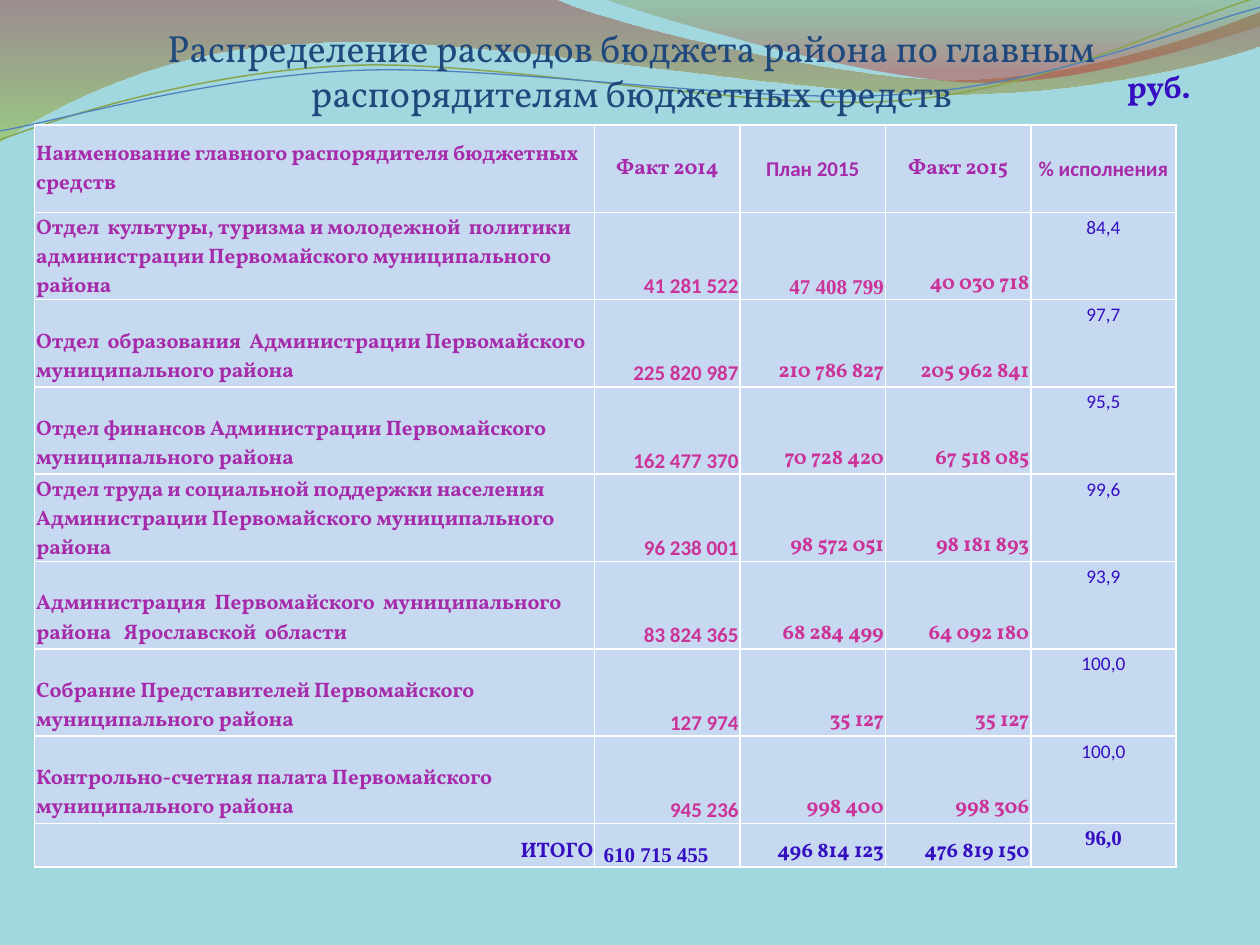
"""Build the slide of district budget spending by main fund holder."""
from dataclasses import dataclass
from math import cos, radians, sin

from lxml.etree import SubElement as Sub
from pptx import Presentation
from pptx.dml.color import RGBColor as Rgb
from pptx.enum.text import MSO_ANCHOR as Anchor, PP_ALIGN as Align
from pptx.oxml import parse_xml
from pptx.oxml.ns import nsdecls, qn
from pptx.util import Cm, Pt


@dataclass(frozen=True)
class Theme:
    back: str = "A1D8DF"
    cell: str = "C6D9F1"
    rule: str = "FFFFFF"
    title: str = "1F497D"
    label: str = "A62AA9"
    money: str = "CC3399"
    total: str = "350EC2"
    olive: str = "89A54F"
    blue: str = "4F81BD"
    serif: str = "Vollkorn"
    sans: str = "Calibri"
    times: str = "Times New Roman"
    head: float = 21.6
    unit: float = 18
    body: float = 12
    small: float = 11


THEME = Theme()
TILT = -2.7

BAND = [
    [(0, 0)], [(11.18, -0.03)],
    [(12.09, 0.43), (16.87, 1.6), (19.25, 1.6)],
    [(21.67, 1.6), (24.33, 0.66), (25.4, 0.23)],
    [(25.43, 0.91)],
    [(24.97, 1.12), (22.1, 1.93), (18.95, 1.9)],
    [(15.8, 1.9), (9.7, 0.71), (6.53, 0.86)],
    [(3.28, 0.91), (1.17, 2.11), (-0.03, 2.87)],
]
CREST = [
    [(12.17, -0.03)],
    [(12.93, 0.28), (17.32, 1.57), (19.53, 1.65)],
    [(21.74, 1.75), (24.41, 0.81), (25.4, 0.53)],
    [(25.4, 0)],
]
UPPER = [
    [(0, 2.82)],
    [(1.22, 2.36), (4.01, 1.45), (7.04, 1.32)],
    [(10.03, 1.19), (15.06, 2.26), (18.11, 2.03)],
    [(21.16, 1.8), (23.83, 0.38), (25.35, -0.05)],
]
LOWER = [
    [(0, 2.64)],
    [(1.19, 2.44), (4.17, 1.55), (7.19, 1.42)],
    [(10.24, 1.3), (15.16, 2.13), (18.21, 1.9)],
    [(21.23, 1.7), (23.9, 0.53), (25.4, 0.15)],
]
ROWS = [
    ("Наименование главного распорядителя бюджетных средств",
     "Факт 2014", "План 2015", "Факт 2015", "% исполнения"),
    ("Отдел  культуры, туризма и молодежной  политики администрации Первомайского муниципального района",
     "41 281 522", "47 408 799", "40 030 718", "84,4"),
    ("Отдел  образования  Администрации Первомайского муниципального района",
     "225 820 987", "210 786 827", "205 962 841", "97,7"),
    ("Отдел финансов Администрации Первомайского муниципального района",
     "162 477 370", "70 728 420", "67 518 085", "95,5"),
    ("Отдел труда и социальной поддержки населения Администрации Первомайского муниципального района",
     "96 238 001", "98 572 051", "98 181 893", "99,6"),
    ("Администрация  Первомайского  муниципального района   Ярославской  области",
     "83 824 365", "68 284 499", "64 092 180", "93,9"),
    ("Собрание Представителей Первомайского муниципального района",
     "127 974", "35 127", "35 127", "100,0"),
    ("Контрольно-счетная палата Первомайского муниципального района",
     "945 236", "998 400", "998 306", "100,0"),
    ("ИТОГО", "610 715 455", "496 814 123", "476 819 150", "96,0"),
]
LAST = len(ROWS) - 1


def add_path(slide, parts, close):
    spots = [(Cm(x), Cm(y)) for part in parts for x, y in part]
    pen = slide.shapes.build_freeform(*spots[0])
    pen.add_line_segments(spots[1:], close=close)
    shape = pen.convert_to_shape()
    shape.shadow.inherit = False
    steps = iter(list(shape.element.spPr.iter(qn("a:lnTo"))))
    for part in parts[1:]:
        nodes = [next(steps) for spot in part]
        if len(nodes) == 3:
            curve = parse_xml(f'<a:cubicBezTo {nsdecls("a")}/>')
            nodes[0].addprevious(curve)
            for node in nodes:
                curve.append(node[0])
                node.getparent().remove(node)
    return shape


def add_wave(slide, parts, stops):
    shape = add_path(slide, parts, True)
    shape.line.fill.background()
    shape.fill.gradient()
    shape.fill.gradient_angle = 270
    nodes = shape.fill.gradient_stops
    for stop, (place, color, alpha) in zip(nodes, stops):
        stop.position = place
        stop.color.rgb = Rgb.from_string(color)
    tints = shape.element.spPr.iter(qn("a:srgbClr"))
    for tint, (place, color, alpha) in zip(tints, stops):
        Sub(tint, qn("a:alpha"), val=str(alpha * 1000))


def turn(spot, hub, angle):
    x, y = spot[0] - hub[0], spot[1] - hub[1]
    c, s = cos(radians(angle)), sin(radians(angle))
    return hub[0] + x * c - y * s, hub[1] + x * s + y * c


def add_curve(slide, parts, hub, color, width):
    flat = [[turn(spot, hub, -TILT) for spot in part] for part in parts]
    shape = add_path(slide, flat, False)
    shape.rotation = TILT
    shape.fill.background()
    shape.line.color.rgb = Rgb.from_string(color)
    shape.line.width = Pt(width)


def write(frame, text, font, size, color, bold, align, space=None):
    frame.text = text
    para = frame.paragraphs[0]
    para.alignment = align
    para.line_spacing = space
    face = para.runs[0].font
    face.name, face.size, face.bold = font, Pt(size), bold
    face.color.rgb = Rgb.from_string(color)


def add_text(slide, box, anchor, text, *style):
    frame = slide.shapes.add_textbox(*map(Cm, box)).text_frame
    frame.word_wrap = True
    frame.vertical_anchor = anchor
    write(frame, text, *style)
    return frame


def choose(row, col):
    t = THEME
    if row == 0:
        font = t.sans if col in (2, 4) else t.serif
        return font, t.body, t.label, True, Align.CENTER if col else Align.LEFT
    if row == LAST:
        font = t.times if col in (1, 4) else t.serif
        align = {1: Align.LEFT, 4: Align.CENTER}.get(col, Align.RIGHT)
        return font, t.body, t.total, True, align
    if col == 0:
        return t.serif, t.body, t.label, True, Align.LEFT
    if col == 4:
        return t.sans, t.small, t.total, False, Align.CENTER
    font = t.sans if col == 1 else t.times if (row, col) == (1, 2) else t.serif
    return font, t.body, t.money, True, Align.RIGHT


def add_rules(cell):
    props = cell._tc.get_or_add_tcPr()
    for spot, side in enumerate("LRTB"):
        props.insert(spot, parse_xml(
            f'<a:ln{side} {nsdecls("a")} w="{Pt(1)}"><a:solidFill>'
            f'<a:srgbClr val="{THEME.rule}"/></a:solidFill></a:ln{side}>'))


def fill_cell(cell, row, col, text):
    loose = row > 0 and col == 4 or (row, col) == (LAST, 1)
    cell.margin_left = cell.margin_right = Cm(0.18 if loose else 0.03)
    cell.margin_top = Cm(0 if loose else 0.04)
    cell.margin_bottom = Cm(0 if loose else 0.01)
    cell.vertical_anchor = (Anchor.MIDDLE if row == 0 else
                            Anchor.TOP if col == 4 else Anchor.BOTTOM)
    cell.fill.solid()
    cell.fill.fore_color.rgb = Rgb.from_string(THEME.cell)
    add_rules(cell)
    write(cell.text_frame, text, *choose(row, col), 1.15 if loose else None)


def add_grid(slide):
    box = map(Cm, (0.7, 2.52, 23.01, 15.01))
    grid = slide.shapes.add_table(len(ROWS), len(ROWS[0]), *box).table
    grid.first_row = grid.horz_banding = False
    for col, part in enumerate(grid.columns):
        part.width = Cm(2.93 if col else 11.29)
    for row, texts in enumerate(ROWS):
        grid.rows[row].height = Cm(0.88 if row == LAST else 1.76)
        for col, text in enumerate(texts):
            fill_cell(grid.cell(row, col), row, col, text)


def main():
    deck = Presentation()
    deck.slide_width, deck.slide_height = Cm(25.4), Cm(19.05)
    slide = deck.slides.add_slide(deck.slide_layouts[6])
    slide.background.fill.solid()
    slide.background.fill.fore_color.rgb = Rgb.from_string(THEME.back)
    add_wave(slide, BAND, [(0, "973330", 45), (1, "95C238", 55)])
    add_wave(slide, CREST, [(0, "769537", 30), (0.8, "BE3330", 45)])
    add_curve(slide, UPPER, (12.67, 1.46), THEME.olive, 0.85)
    add_curve(slide, LOWER, (12.69, 1.5), THEME.blue, 0.75)
    title = add_text(
        slide, (1.3, 0.33, 22.86, 2), Anchor.BOTTOM,
        "Распределение расходов бюджета района по главным распорядителям бюджетных средств",
        THEME.serif, THEME.head, THEME.title, False, Align.CENTER)
    title.margin_left = title.margin_right = title.margin_bottom = 0
    add_grid(slide)
    add_text(slide, (21.49, 0.99, 3.61, 1.47), Anchor.MIDDLE, " руб.",
             THEME.serif, THEME.unit, THEME.total, True, Align.CENTER)
    deck.save("out.pptx")


if __name__ == "__main__":
    main()
